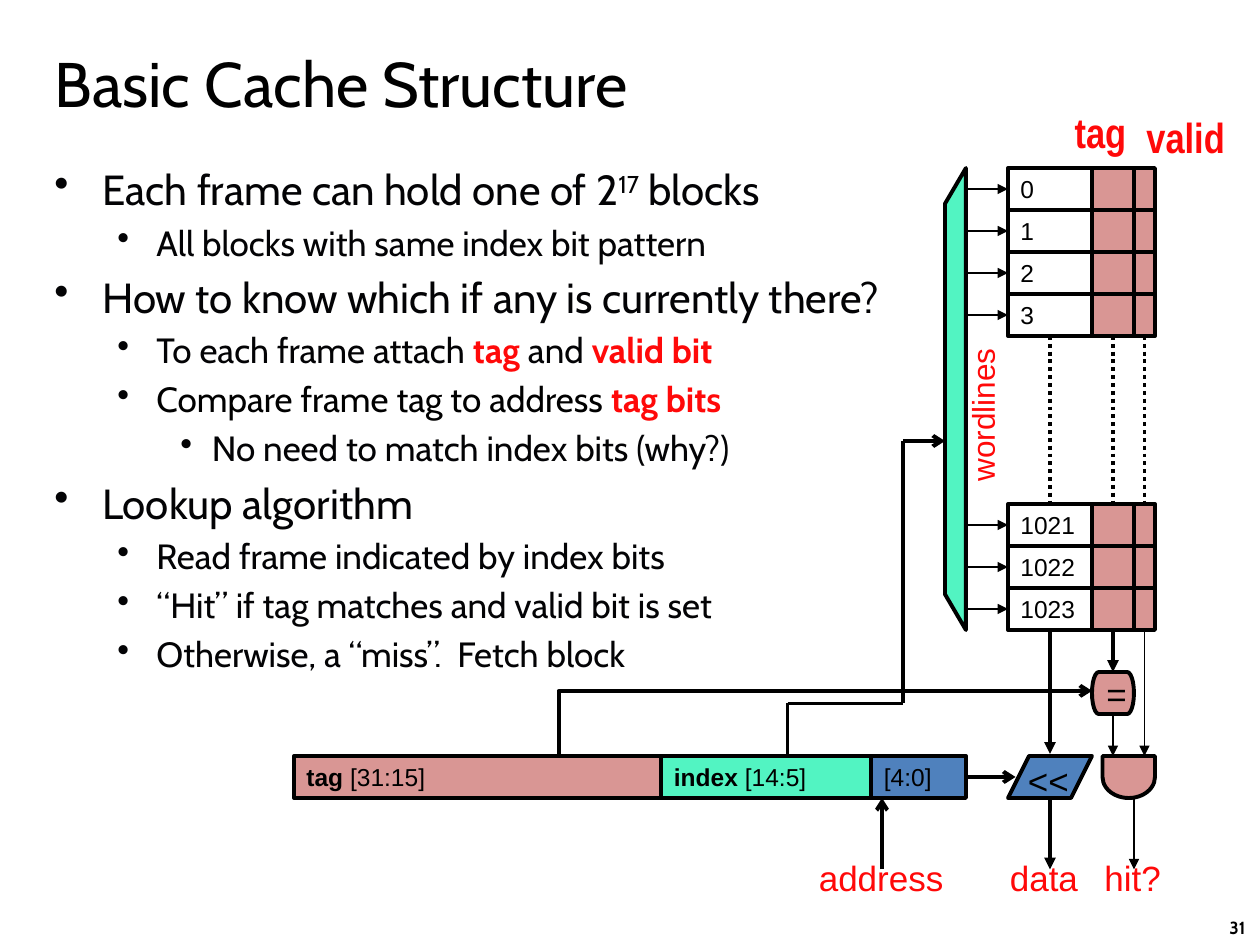
"""Build the slide on basic cache structure on a grid of 60 columns by 45 rows."""
from dataclasses import dataclass, replace
from typing import NamedTuple, Optional

from pptx import Presentation
from pptx.dml.color import RGBColor
from pptx.enum.dml import MSO_LINE
from pptx.enum.shapes import MSO_CONNECTOR, MSO_SHAPE
from pptx.enum.text import MSO_ANCHOR
from pptx.oxml.ns import qn
from pptx.oxml.xmlchemy import OxmlElement
from pptx.util import Inches, Pt

COLORS = {"black": "000000", "ink": "030305", "red": "FF0909",
          "tag": "D99694", "index": "52F4C2", "offset": "4F81BD"}
COLUMNS, ROWS = 60, 45
THICK, THIN = 2.25, 1


class Box(NamedTuple):
    left: float
    top: float
    width: float
    height: float


@dataclass(frozen=True)
class Run:
    text: str
    size: float = 14
    color: str = "black"
    bold: bool = False
    font: str = "Arial"
    superscript: bool = False


@dataclass(frozen=True)
class Label:
    box: Box
    run: Run
    rotation: float = 0


@dataclass(frozen=True)
class Wire:
    start: tuple
    end: tuple
    weight: float = THICK
    head: Optional[str] = None
    dotted: bool = False
    source: Optional[tuple] = None
    target: Optional[tuple] = None


class Level(NamedTuple):
    size: int
    margin: float
    hanging: float


class Bullet(NamedTuple):
    level: int
    runs: tuple


LEVELS = (Level(24, 0.38, 0.38), Level(20, 0.81, 0.31), Level(20, 1.25, 0.25))


def point(text: str) -> Run:
    return Run(text, color="ink", font="Cabin")


def key(text: str) -> Run:
    return Run(text, color="red", bold=True, font="Cabin")


BULLETS = (
    Bullet(0, (point("Each frame can hold one of 2"),
               replace(point("17"), superscript=True), point(" blocks"))),
    Bullet(1, (point("All blocks with same index bit pattern"),)),
    Bullet(0, (point("How to know which if any is currently there?"),)),
    Bullet(1, (point("To each frame attach "), key("tag"), point(" and "), key("valid bit"))),
    Bullet(1, (replace(point("Compare frame tag to address "), color="black"),
               key("tag bits"))),
    Bullet(2, (point("No need to match index bits (why?)"),)),
    Bullet(0, (point("Lookup algorithm"),)),
    Bullet(1, (point("Read frame indicated by index bits"),)),
    Bullet(1, (point("“Hit” if tag matches and valid bit is set"),)),
    Bullet(1, (point("Otherwise, a “miss”.  Fetch block"),)),
)

LABELS = (
    Label(Box(48.36, 35.88, 3.18, 2.58), Run("<<", 20)),
    Label(Box(38.4, 40.5, 7.14, 2.58), Run("address", 20, "red")),
    Label(Box(47.5, 40.5, 4.44, 2.58), Run("data", 20, "red")),
    Label(Box(52, 40.5, 3.9, 2.58), Run("hit?", 20, "red")),
    Label(Box(43, 18.54, 7.56, 2.4), Run("wordlines", 18, "red"), 270),
    Label(Box(50.58, 4.8, 3.72, 3), Run("tag", 24, "red", True, "Arial Narrow")),
    Label(Box(54, 5, 4.98, 3), Run("valid", 24, "red", True, "Arial Narrow")),
    Label(Box(57.96, 43.38, 2.64, 1.62), Run("31", 10, bold=True, font="Cabin")),
)

deck = Presentation()
deck.slide_width, deck.slide_height = Inches(10), Inches(7.5)
shapes = deck.slides.add_slide(deck.slide_layouts[6]).shapes


def across(columns: float) -> int:
    return round(deck.slide_width * columns / COLUMNS)


def down(rows: float) -> int:
    return round(deck.slide_height * rows / ROWS)


def place(box: Box) -> tuple:
    return across(box.left), down(box.top), across(box.width), down(box.height)


def rgb(name: str) -> RGBColor:
    return RGBColor.from_string(COLORS[name])


def add_run(paragraph, part: Run) -> None:
    run = paragraph.add_run()
    run.text = part.text
    run.font.name, run.font.size, run.font.bold = part.font, Pt(part.size), part.bold
    run.font.color.rgb = rgb(part.color)
    if part.superscript:
        run.font._element.set("baseline", "30000")


def add_head(outline, kind: str) -> None:
    tail = OxmlElement("a:tailEnd")
    tail.set("type", kind)
    outline._element.spPr.find(qn("a:ln")).append(tail)


def paint(part, fill: Optional[str]) -> None:
    part.shadow.inherit = False
    if fill:
        part.fill.solid()
        part.fill.fore_color.rgb = rgb(fill)
    else:
        part.fill.background()
    part.line.color.rgb, part.line.width = rgb("black"), Pt(THICK)


def add_part(box: Box, fill: Optional[str] = None, runs: tuple = (),
             kind=MSO_SHAPE.RECTANGLE):
    part = shapes.add_shape(kind, *place(box))
    paint(part, fill)
    if runs:
        frame = part.text_frame
        frame.word_wrap, frame.vertical_anchor = False, MSO_ANCHOR.MIDDLE
        frame.paragraphs[0].alignment = 1
        for run in runs:
            add_run(frame.paragraphs[0], run)
    return part


def add_outline(corners: tuple, fill: Optional[str], close: bool = True):
    (first, *rest) = [(across(x), down(y)) for x, y in corners]
    builder = shapes.build_freeform(*first)
    builder.add_line_segments(rest, close=close)
    outline = builder.convert_to_shape()
    paint(outline, fill)
    return outline


def add_wire(wire: Wire) -> None:
    (x1, y1), (x2, y2) = wire.start, wire.end
    line = shapes.add_connector(MSO_CONNECTOR.STRAIGHT, across(x1), down(y1),
                                across(x2), down(y2))
    if wire.source:
        line.begin_connect(*wire.source)
    if wire.target:
        line.end_connect(*wire.target)
    line.line.color.rgb, line.line.width = rgb("black"), Pt(wire.weight)
    if wire.dotted:
        line.line.dash_style = MSO_LINE.ROUND_DOT
    if wire.head:
        add_head(line, wire.head)
    line._element.spPr.append(OxmlElement("a:effectLst"))


def add_label(label: Label) -> None:
    text = shapes.add_textbox(*place(label.box))
    text.rotation = label.rotation
    text.text_frame.word_wrap = False
    add_run(text.text_frame.paragraphs[0], label.run)


def add_bullet(paragraph, bullet: Bullet) -> None:
    level = LEVELS[bullet.level]
    paragraph.level, paragraph.space_before = bullet.level, Pt(level.size * 0.2)
    props = paragraph._p.get_or_add_pPr()
    props.set("marL", str(Inches(level.margin)))
    props.set("indent", str(-Inches(level.hanging)))
    tint, value, mark = (OxmlElement(f"a:{tag}") for tag in ("buClr", "srgbClr", "buChar"))
    value.set("val", COLORS["ink"])
    mark.set("char", "•")
    tint.append(value)
    props.extend((tint, mark))
    for run in bullet.runs:
        add_run(paragraph, replace(run, size=level.size))


def add_copy() -> None:
    title = shapes.add_textbox(*place(Box(2, 1.5, 56, 4.5))).text_frame
    title.word_wrap, title.vertical_anchor = True, MSO_ANCHOR.BOTTOM
    add_run(title.paragraphs[0], Run("Basic Cache Structure", 36, font="Cabin"))
    body = shapes.add_textbox(*place(Box(2, 7.5, 44, 28.5))).text_frame
    body.word_wrap = True
    for number, bullet in enumerate(BULLETS):
        add_bullet(body.add_paragraph() if number else body.paragraphs[0], bullet)


def add_frame(number: int, top: float) -> tuple:
    data = add_part(Box(48, top, 4, 2), None, (Run(str(number)),))
    add_wire(Wire((46, top + 1), (48, top + 1), THIN, "triangle", target=(data, 1)))
    return data, add_part(Box(52, top, 2, 2), "tag"), add_part(Box(54, top, 1, 2), "tag")


def add_cache() -> None:
    add_outline(((46, 8), (46, 30), (45, 28.3), (45, 9.7)), "index")
    upper = [add_frame(number, 8 + 2 * number) for number in range(4)]
    lower = [add_frame(1021 + row, 24 + 2 * row) for row in range(3)]
    compare = add_part(Box(52, 32, 2, 2), "tag", (Run("=", 20),),
                       MSO_SHAPE.FLOWCHART_TERMINATOR)
    add_part(Box(52.75, 35.75, 2, 2.5), "tag", kind=MSO_SHAPE.FLOWCHART_DELAY).rotation = 90
    add_outline(((49, 36), (48, 38), (51, 38), (52, 36)), "offset")
    outputs = ((50, 35.9, THICK, None), (53, 32, THICK, (compare, 0)), (54.5, 36, THIN, None))
    for above, below, last, (x, end, weight, target) in zip(upper[-1], lower[0], lower[-1], outputs):
        add_wire(Wire((x, 16), (x, 24), dotted=True, source=(above, 2), target=(below, 0)))
        add_wire(Wire((x, 30), (x, end), weight, "triangle", source=(last, 2), target=target))
    add_wire(Wire((53, 34), (53, 36), THIN, "triangle", source=(compare, 2)))


def add_address() -> None:
    add_part(Box(14, 36, 17.5, 2), "tag", (Run("tag ", bold=True), Run("[31:15]")))
    add_part(Box(31.5, 36, 10, 2), "index", (Run("index ", bold=True), Run("[14:5]")))
    offset = add_part(Box(41.5, 36, 4.5, 2), "offset", (Run("[4:0]"),))
    add_head(add_outline(((26.6, 35.9), (26.6, 32.9), (52, 32.9)), None, False), "arrow")
    for wire in (
        Wire((46, 37), (48.36, 37), head="arrow", source=(offset, 3)),
        Wire((42, 41.4), (42, 38), head="arrow"),
        Wire((50, 38), (50, 41.4), head="triangle"),
        Wire((54, 38), (54, 41.4), THIN, "triangle"),
        Wire((37.5, 33.5), (37.5, 36)),
        Wire((37.5, 33.5), (43, 33.5)),
        Wire((43, 21), (43, 33.5)),
        Wire((43, 21), (45, 21), head="arrow"),
    ):
        add_wire(wire)


def main() -> None:
    add_copy()
    add_cache()
    add_address()
    for label in LABELS:
        add_label(label)
    deck.save("out.pptx")


if __name__ == "__main__":
    main()
